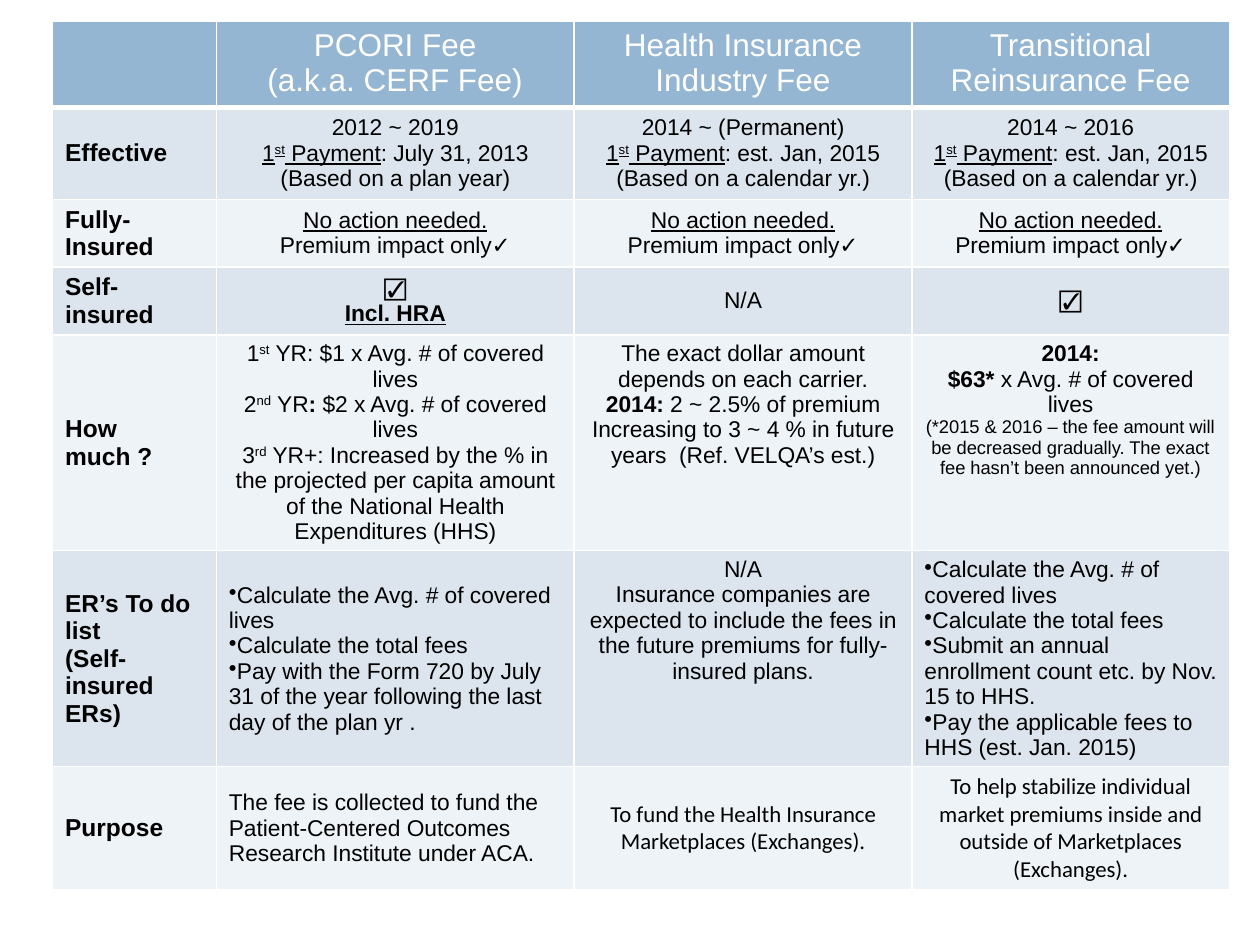
"""Build a slide with a table that compares three health plan fees."""
from lxml.etree import SubElement
from pptx import Presentation
from pptx.dml.color import RGBColor
from pptx.enum.text import MSO_ANCHOR, PP_ALIGN
from pptx.oxml.ns import qn
from pptx.util import Pt

COLORS = {"head": "94B6D2", "dark": "DCE5EE", "light": "EEF3F7",
          "white": "FFFFFF", "text": "000000"}
COLS = [93.6, 204.5, 193, 181.4]
ROWS = [49, 52.6, 38.2, 38.2, 83.5, 112.3, 65.5]
TOP = {(4, 1), (4, 2), (4, 3), (5, 2)}
LISTS = {(5, 1), (5, 3)}
LEFT = LISTS | {(6, 1)}
CALIBRI = {(6, 2), (6, 3)}


def first(rest):
    """Return the runs of a first payment line."""
    return [("1", "u"), ("st", "u^"), (" Payment", "u"), (": " + rest, "")]


def year(num, end, *rest):
    """Return the runs of a line that opens with an ordinal."""
    return [(num, ""), (end, "^"), *rest]


NONE = [[("No action needed.", "u")], "Premium impact only✓"]
COUNT = ["Calculate the Avg. # of covered lives", "Calculate the total fees"]
CELLS = [
    [[],
     ["PCORI Fee", "(a.k.a. CERF Fee)"],
     ["Health Insurance Industry Fee"],
     ["Transitional Reinsurance Fee"]],
    [["Effective"],
     ["2012 ~ 2019", first("July 31, 2013"), "(Based on a plan year)"],
     ["2014 ~ (Permanent)", first("est. Jan, 2015"), "(Based on a calendar yr.)"],
     ["2014 ~ 2016", first("est. Jan, 2015"), "(Based on a calendar yr.)"]],
    [["Fully-Insured"], NONE, NONE, NONE],
    [["Self-insured"], ["☑", [("Incl. HRA", "bu")]], ["N/A"], ["☑"]],
    [["How much ?"],
     [year("1", "st", (" YR: $1 x Avg. # of covered lives", "")),
      year("2", "nd", (" YR", ""), (":", "b"), (" $2 x Avg. # of covered lives", "")),
      year("3", "rd", (" YR+: Increased by the % in the projected per capita amount "
                       "of the National Health Expenditures (HHS)", ""))],
     ["The exact dollar amount depends on each carrier.",
      [("2014: ", "b"), ("2 ~ 2.5% of premium", "")],
      "Increasing to 3 ~ 4 % in future years  (Ref. VELQA’s est.)"],
     [[("2014:", "b")],
      [("$63* ", "b"), ("x Avg. # of covered lives", "")],
      [("(*2015 & 2016 – the fee amount will be decreased gradually. "
        "The exact fee hasn’t been announced yet.)", "s")]]],
    [["ER’s To do list", "(Self-insured ERs)"],
     COUNT + ["Pay with the Form 720 by July 31 of the year following "
              "the last day of the plan yr ."],
     ["N/A", "Insurance companies are expected to include the fees in the "
             "future premiums for fully-insured plans."],
     COUNT + ["Submit an annual enrollment count etc. by Nov. 15 to HHS.",
              "Pay the applicable fees to HHS (est. Jan. 2015)"]],
    [["Purpose"],
     ["The fee is collected to fund the Patient-Centered Outcomes "
      "Research Institute under ACA."],
     ["To fund the Health Insurance Marketplaces (Exchanges)."],
     ["To help stabilize individual market premiums inside and outside "
      "of Marketplaces (Exchanges)."]],
]


class Deck:
    """Hold the style and the current slide."""

    def __init__(self):
        self.show = Presentation()
        self.show.slide_width, self.show.slide_height = Pt(720), Pt(540)
        self.slide = self.show.slides.add_slide(self.show.slide_layouts[6])

    def table(self, x, y, cols, rows, cells):
        """Add the table and fill in its cells."""
        frame = self.slide.shapes.add_table(
            len(rows), len(cols), Pt(x), Pt(y), Pt(sum(cols)), Pt(sum(rows)))
        grid = frame.table
        grid.first_row = grid.horz_banding = False
        for col, width in zip(grid.columns, cols):
            col.width = Pt(width)
        for row, height in zip(grid.rows, rows):
            row.height = Pt(height)
        for r, line in enumerate(cells):
            for c, paras in enumerate(line):
                self.cell(grid.cell(r, c), r, c, paras)

    def cell(self, cell, r, c, paras):
        """Style one cell and write its paragraphs."""
        self.edges(cell, 3 if r == 0 else 1)
        tone = "head" if r == 0 else "dark" if r % 2 else "light"
        cell.fill.solid()
        cell.fill.fore_color.rgb = RGBColor.from_string(COLORS[tone])
        high = r == 0 or (r, c) in TOP
        cell.vertical_anchor = MSO_ANCHOR.TOP if high else MSO_ANCHOR.MIDDLE
        size = 18 if r == 0 else 14 if c == 0 else 13
        font = "Calibri" if (r, c) in CALIBRI else "Arial"
        color = COLORS["white" if r == 0 else "text"]
        frame = cell.text_frame
        for i, para in enumerate(paras):
            p = frame.add_paragraph() if i else frame.paragraphs[0]
            flush = c == 0 or (r, c) in LEFT
            p.alignment = PP_ALIGN.LEFT if flush else PP_ALIGN.CENTER
            if (r, c) in LISTS:
                self.bullet(p)
            runs = [(para, "")] if isinstance(para, str) else para
            for text, marks in runs:
                self.run(p, text, marks + "b" * (c == 0), size, font, color)

    def run(self, p, text, marks, size, font, color):
        """Add one run; marks are b bold, u underline, s small, ^ raised."""
        run = p.add_run()
        run.text = text
        run.font.name = font
        run.font.size = Pt(10.5 if "s" in marks else size)
        run.font.bold = "b" in marks
        run.font.underline = "u" in marks
        run.font.color.rgb = RGBColor.from_string(color)
        if "^" in marks:
            run.font._element.set("baseline", "30000")

    def bullet(self, p):
        """Give the paragraph a bullet without an indent."""
        props = p._p.get_or_add_pPr()
        props.set("marL", "0")
        props.set("indent", "0")
        SubElement(props, qn("a:buChar")).set("char", "•")

    def edges(self, cell, base):
        """Draw white borders, the lower one with its own width."""
        props = cell._tc.get_or_add_tcPr()
        for side, width in zip("LRTB", (1, 1, 1, base)):
            line = SubElement(props, qn("a:ln" + side), w=str(Pt(width)))
            fill = SubElement(line, qn("a:solidFill"))
            SubElement(fill, qn("a:srgbClr")).set("val", COLORS["white"])


def main():
    """Make the slide and save it."""
    deck = Deck()
    deck.table(30, 12.4, COLS, ROWS, CELLS)
    deck.show.save("out.pptx")


if __name__ == "__main__":
    main()
